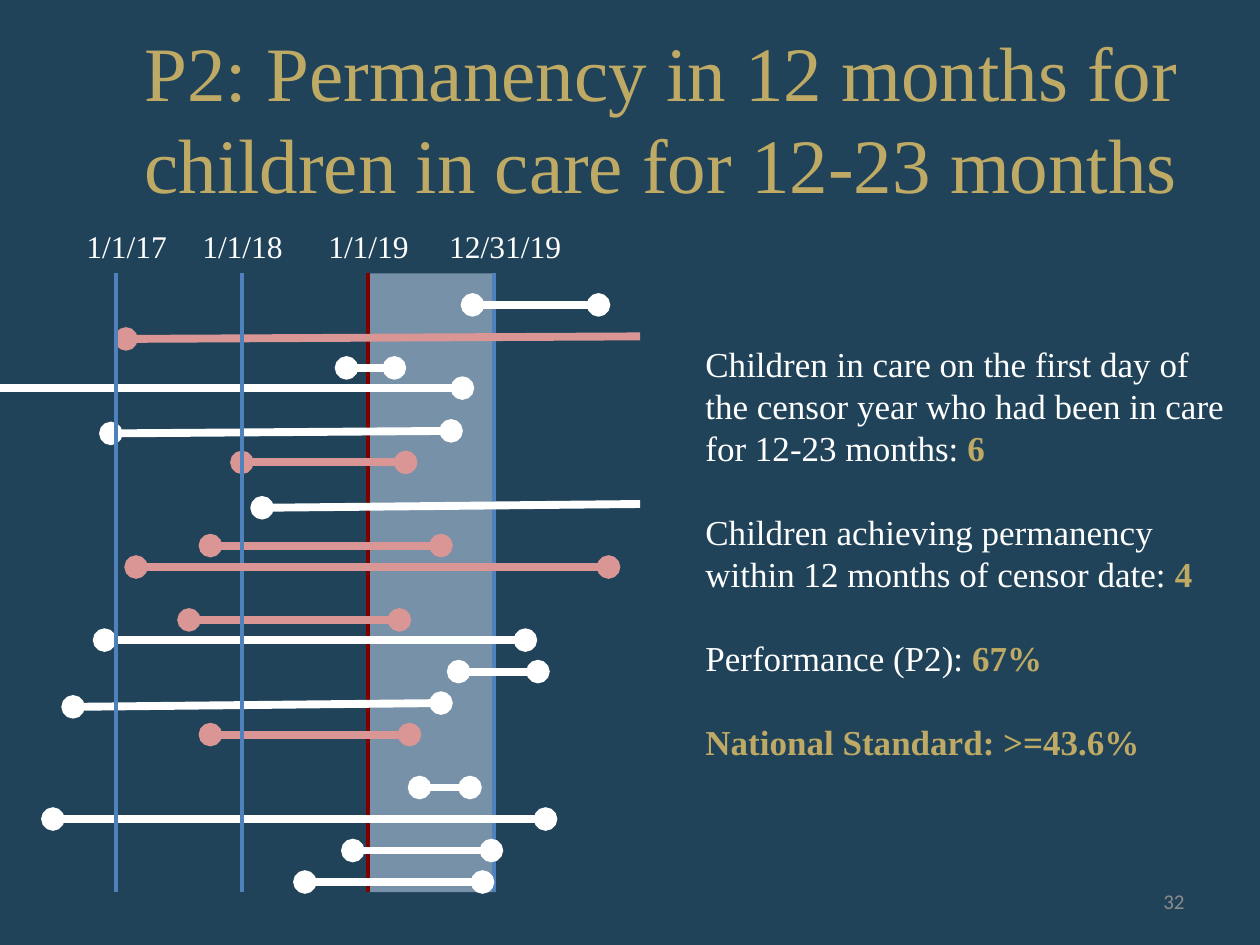
from pptx import Presentation
from pptx import util as u
from pptx.dml.color import RGBColor
from pptx.enum import shapes, text
from pptx.oxml.ns import qn
from lxml import etree

HUE = {"back": "204359", "gold": "BEAA64", "white": "FFFFFF", "pink": "D99694",
       "blue": "4F81BD", "red": "800000", "band": "B9CDE5", "gray": "8C8C8C"}
SERIF = "Times New Roman"
TITLE = "P2: Permanency in 12 months for children in care for 12-23 months"
TOP, END = 2.17, 7.08
FIRST, YEAR = 0.92, 1

DATES = [("1/1/17", 0.58, 0.85, "blue"), ("1/1/18", 1.5, 0.85, "blue"),
         ("1/1/19", 2.5, 0.85, "red"), ("12/31/19", 3.46, 1.1, "blue")]

BOTH, HEAD, TAIL = ("head", "tail"), ("head",), ("tail",)
STAYS = [
    (3.75, 2.42, 4.75, 2.42, "white", BOTH),
    (1, 2.69, 5.08, 2.67, "pink", HEAD),
    (2.75, 2.92, 3.13, 2.92, "white", BOTH),
    (0, 3.08, 3.67, 3.08, "white", TAIL),
    (0.88, 3.44, 3.58, 3.42, "white", BOTH),
    (1.92, 3.67, 3.22, 3.67, "pink", BOTH),
    (2.08, 4.03, 5.08, 4, "white", HEAD),
    (1.67, 4.33, 3.5, 4.33, "pink", BOTH),
    (1.5, 4.92, 3.17, 4.92, "pink", BOTH),
    (0.83, 5.08, 4.17, 5.08, "white", BOTH),
    (3.64, 5.33, 4.27, 5.33, "white", BOTH),
    (0.58, 5.61, 3.5, 5.58, "white", BOTH),
    (1.67, 5.83, 3.25, 5.83, "pink", BOTH),
    (3.33, 6.25, 3.73, 6.25, "white", BOTH),
    (0.42, 6.5, 4.33, 6.5, "white", BOTH),
    (2.8, 6.75, 3.9, 6.75, "white", BOTH),
    (2.42, 7, 3.83, 7, "white", BOTH),
]
LONG = (1.08, 4.5, 4.83, 4.5, "pink", BOTH)

FACTS = [
    [("Children in care on the first day of the censor year who had been in care "
      "for 12-23 months: ", "white", False), ("6", "gold", True)],
    [("Children achieving permanency within 12 months of censor date: ", "white", False),
     ("4", "gold", True)],
    [("Performance (P2): ", "white", False), ("67%", "gold", True)],
    [("National Standard: >=43.6%", "gold", True)],
]


def color(key):
    return RGBColor.from_string(HUE[key])


def write(slide, box, paras, size, font=SERIF, align="LEFT", mid=False, wrap=True, gap=0):
    frame = slide.shapes.add_textbox(*map(u.Inches, box)).text_frame
    frame.word_wrap = wrap
    frame.vertical_anchor = text.MSO_ANCHOR.MIDDLE if mid else text.MSO_ANCHOR.TOP
    for i, runs in enumerate(paras):
        para = frame.add_paragraph() if i else frame.paragraphs[0]
        para.alignment = text.PP_ALIGN[align]
        para.space_before = u.Pt(gap if i else 0)
        for words, hue, bold in runs:
            run = para.add_run()
            run.text = words
            run.font.name, run.font.size, run.font.bold = font, u.Pt(size), bold
            run.font.color.rgb = color(hue)
    return frame


def draw(slide, x1, y1, x2, y2, hue, dots=(), width=4.5):
    line = slide.shapes.add_connector(shapes.MSO_CONNECTOR.STRAIGHT,
                                      *map(u.Inches, (x1, y1, x2, y2)))
    line.line.color.rgb = color(hue)
    line.line.width = u.Pt(width)
    props = line._element.spPr
    for end in dots:
        etree.SubElement(props.find(qn("a:ln")), qn(f"a:{end}End"), type="oval")
    etree.SubElement(props, qn("a:effectLst"))


def mark(slide, i):
    label, left, width, hue = DATES[i]
    x = FIRST + i * YEAR
    draw(slide, x, TOP, x, END, hue, width=2)
    write(slide, (left, 1.75, width, 0.4), [[(label, "white", False)]], 18,
          align="CENTER", wrap=False)


def main():
    deck = Presentation()
    deck.slide_width, deck.slide_height = u.Inches(10), u.Inches(7.5)
    slide = deck.slides.add_slide(deck.slide_layouts[6])
    slide.background.fill.solid()
    slide.background.fill.fore_color.rgb = color("back")

    title = write(slide, (0.5, 0.3, 9, 1.25), [[(TITLE, "gold", False)]], 44,
                  align="CENTER", mid=True)
    title.paragraphs[0]._p.get_or_add_pPr().set("marL", str(u.Inches(0.5)))

    band = slide.shapes.add_shape(shapes.MSO_SHAPE.RECTANGLE, *map(
        u.Inches, (FIRST + 2 * YEAR, TOP, YEAR, END - TOP)))
    band.shadow.inherit = False
    band.line.fill.background()
    band.fill.solid()
    band.fill.fore_color.rgb = color("band")
    tint = band._element.spPr.find(qn("a:solidFill"))[0]
    etree.SubElement(tint, qn("a:alpha"), val="57000")

    for i in (2, 3):
        mark(slide, i)
    for stay in STAYS:
        draw(slide, *stay)
    for i in (0, 1):
        mark(slide, i)
    draw(slide, *LONG)

    write(slide, (5.5, 2.67, 4.33, 3.47), FACTS, 20, gap=24)
    write(slide, (7.17, 6.95, 2.33, 0.4), [[("32", "gray", False)]], 12,
          font="Calibri", align="RIGHT", mid=True)
    deck.save("out.pptx")


if __name__ == "__main__":
    main()
